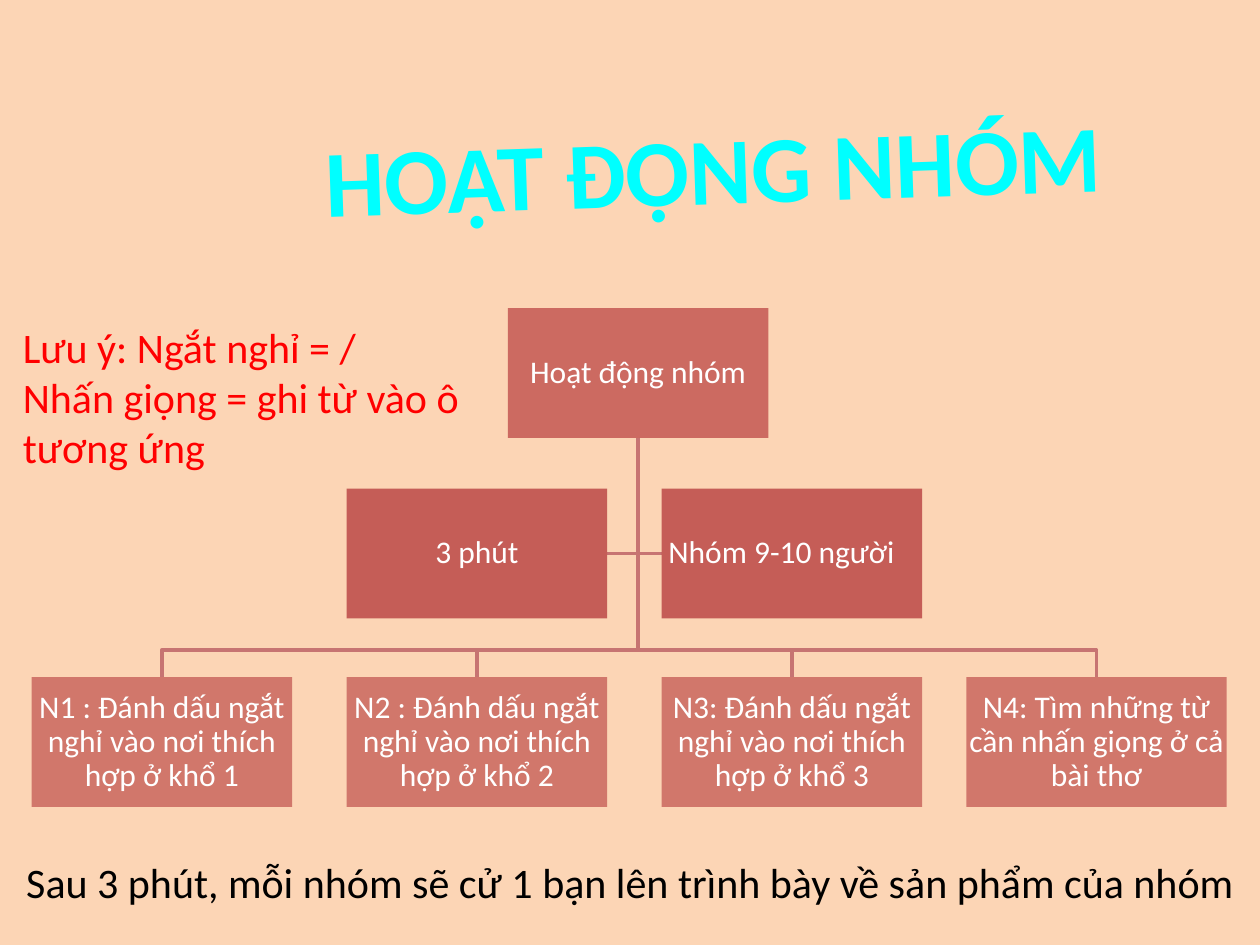
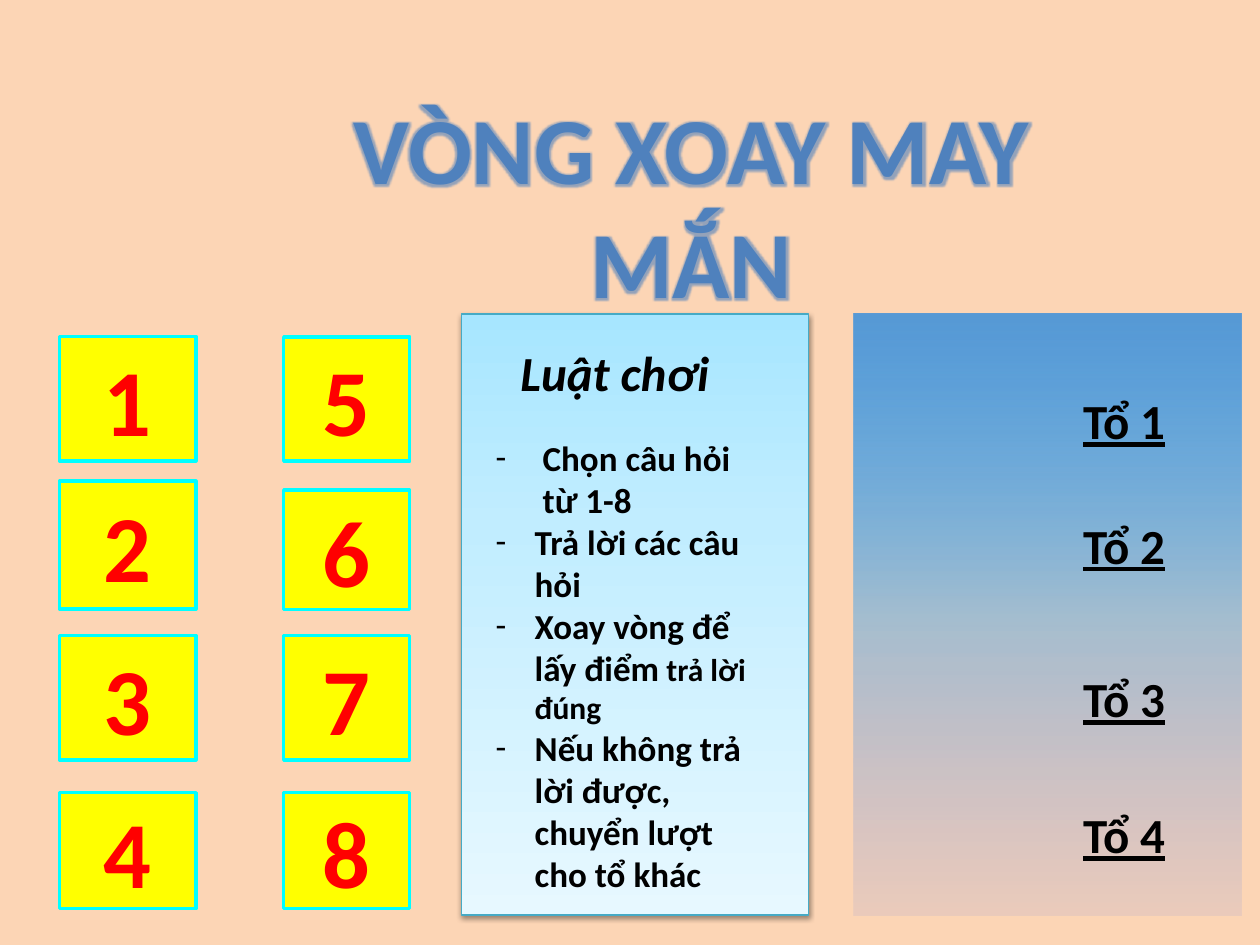
import dataclasses
import pptx
import pptx.util
import pptx.dml.color
import pptx.enum.shapes
import pptx.enum.text
import pptx.oxml
import pptx.oxml.ns
import lxml.etree

Cm = pptx.util.Cm
Pt = pptx.util.Pt
qn = pptx.oxml.ns.qn
add = lxml.etree.SubElement
RGB = pptx.dml.color.RGBColor.from_string
RECT = pptx.enum.shapes.MSO_SHAPE.RECTANGLE
ALIGN = pptx.enum.text.PP_ALIGN
MID = pptx.enum.text.MSO_ANCHOR.MIDDLE
SPACE = 'xmlns:a="http://schemas.openxmlformats.org/drawingml/2006/main"'


@dataclasses.dataclass(frozen=True)
class Theme:
    font: str = "Calibri"
    page: str = "FCD5B5"
    cyan: str = "00FFFF"
    blue: str = "4F81BD"
    red: str = "FF0000"
    gold: str = "FFFF00"
    black: str = "000000"
    white: str = "FFFFFF"
    brick: str = "C0504D"
    link: str = "C77472"
    edge: str = "46AAC5"
    sky: tuple = ((0, "A7E6FF", 100), (35, "C1EDFF", 100), (100, "E7F8FF", 100))
    dusk: tuple = ((0, "5799D5", 100), (50, "0192FF", 35), (100, "3366FF", 8))
    huge: int = 54
    head: int = 28
    note: int = 24
    rule: int = 20
    node: int = 18


theme = Theme()


def write(shape, lines, size, ink, bold=False, align=ALIGN.LEFT, wrap=True):
    frame = shape.text_frame
    frame.word_wrap = wrap
    for i, line in enumerate(lines):
        para = frame.paragraphs[0] if i == 0 else frame.add_paragraph()
        para.text = line
        para.alignment = align
        font = para.font
        font.name, font.size, font.bold = theme.font, Pt(size), bold
        font.color.rgb = RGB(ink)
    return frame


def panel(slide, box, fill, line=None, width=0):
    shape = slide.shapes.add_shape(RECT, *map(Cm, box))
    shape.shadow.inherit = False
    if isinstance(fill, str):
        shape.fill.solid()
        shape.fill.fore_color.rgb = RGB(fill)
    else:
        stops = "".join(
            f'<a:gs pos="{pos * 1000}"><a:srgbClr val="{hue}">'
            f'<a:alpha val="{alpha * 1000}"/></a:srgbClr></a:gs>'
            for pos, hue, alpha in fill)
        grad = pptx.oxml.parse_xml(
            f'<a:gradFill {SPACE} rotWithShape="1"><a:gsLst>{stops}</a:gsLst>'
            '<a:lin ang="5400000" scaled="0"/></a:gradFill>')
        shape._element.spPr.find(qn("a:prstGeom")).addnext(grad)
    if line:
        shape.line.color.rgb = RGB(line)
        shape.line.width = Pt(width)
    else:
        shape.line.fill.background()
    return shape


deck = pptx.Presentation()
deck.slide_width, deck.slide_height = Cm(25.4), Cm(19.05)
slides = []
for text, box, ink, turn in (
        ("HOẠT ĐỘNG NHÓM", (5.65, 2.08, 17.45, 2.57), theme.cyan, -2),
        ("VÒNG XOAY MAY MẮN", (6.76, 1.7, 14.35, 2.57), theme.blue, 0)):
    slide = deck.slides.add_slide(deck.slide_layouts[6])
    slide.background.fill.solid()
    slide.background.fill.fore_color.rgb = RGB(theme.page)
    title = slide.shapes.add_textbox(*map(Cm, box))
    title.rotation = turn
    write(title, [text], theme.huge, ink, True, ALIGN.CENTER)
    slides.append(slide)
group, game = slides

wide, high = 5.25, 2.62
cols = (0.64, 6.99, 13.34, 19.48)
top, mid, low, bus = 6.21, 9.85, 13.65, 13.1
stem, foot, side = 10.24 + wide / 2, top + high, mid + high / 2
links = [[(stem, side), (x, side)] for x in (cols[2], cols[1] + wide)]
for x in reversed(cols):
    axis = x + wide / 2
    links.append([(stem, bus), (axis, bus), (axis, low)])
for turns in links:
    draft = group.shapes.build_freeform(Cm(stem), Cm(foot))
    draft.add_line_segments([(Cm(x), Cm(y)) for x, y in turns], close=False)
    link = draft.convert_to_shape()
    link.shadow.inherit = False
    link.fill.background()
    link.line.color.rgb = RGB(theme.link)
    link.line.width = Pt(2)

for text, x, y, alpha, inset in (
        ("Hoạt động nhóm", 10.24, top, 80, 0.03),
        ("N1 : Đánh dấu ngắt nghỉ vào nơi thích hợp ở khổ 1", cols[0], low, 70, 0.03),
        ("N2 : Đánh dấu ngắt nghỉ vào nơi thích hợp ở khổ 2", cols[1], low, 70, 0.03),
        ("N3: Đánh dấu ngắt nghỉ vào nơi thích hợp ở khổ 3", cols[2], low, 70, 0.03),
        ("N4: Tìm những từ cần nhấn giọng ở cả bài thơ", cols[3], low, 70, 0.03),
        ("3 phút", cols[1], mid, 90, 0.03),
        ("Nhóm 9-10 người", cols[2], mid, 90, 0.45)):
    node = panel(group, (x, y, wide, high), theme.brick)
    hue = node._element.spPr.find(qn("a:solidFill"))[0]
    add(hue, qn("a:alpha"), val=str(alpha * 1000))
    frame = write(node, [text], theme.node, theme.white, align=ALIGN.CENTER)
    frame.paragraphs[0].line_spacing = 0.9
    frame.vertical_anchor = MID
    frame.margin_left = frame.margin_top = frame.margin_bottom = Cm(0.03)
    frame.margin_right = Cm(inset)

for lines, box, ink in (
        (["Lưu ý: Ngắt nghỉ = /", "Nhấn giọng = ghi từ vào ô", "tương ứng"],
         (0.21, 6.35, 9.37, 3.33), theme.red),
        (["Sau 3 phút, mỗi nhóm sẽ cử 1 bạn lên trình bày về sản phẩm của nhóm"],
         (0.28, 17.15, 25.07, 1.27), theme.black)):
    note = group.shapes.add_textbox(*map(Cm, box))
    write(note, lines, theme.note, ink, wrap=False)

glow = pptx.oxml.parse_xml(
    f'<a:effectLst {SPACE}><a:glow rad="45720"><a:srgbClr val="{theme.blue}">'
    '<a:alpha val="60000"/></a:srgbClr></a:glow></a:effectLst>')
run = game.shapes[0].text_frame.paragraphs[0].runs[0]
run.font.color.rgb = RGB(theme.blue)
run._r.rPr.find(qn("a:solidFill")).addnext(glow)

count = 0
for x, size, rows in (
        (1.2, 2.75, ((6.78, 2.51), (9.7, 2.58), (12.81, 2.51), (15.98, 2.34))),
        (5.72, 2.54, ((6.79, 2.51), (9.88, 2.41), (12.81, 2.51), (15.98, 2.34)))):
    for y, tall in rows:
        count += 1
        tile = panel(game, (x, y, size, tall), theme.gold, theme.cyan, 2)
        frame = write(tile, [str(count)], theme.huge, theme.red, True, ALIGN.CENTER)
        frame.vertical_anchor = MID

panel(game, (17.2, 6.33, 7.82, 12.12), theme.dusk)
for i, y in enumerate((7.75, 10.26, 13.35, 16.1), 1):
    team = game.shapes.add_textbox(Cm(21.59), Cm(y), Cm(4.01), Cm(1.45))
    frame = write(team, [f"Tổ {i}"], theme.head, theme.black, True)
    frame.paragraphs[0].font.underline = True

card = panel(game, (9.31, 6.33, 6.99, 12.12), theme.sky, theme.edge, 0.75)
shade = pptx.oxml.parse_xml(
    f'<a:outerShdw {SPACE} blurRad="39370" dist="20320" dir="5400000" rotWithShape="0">'
    f'<a:srgbClr val="{theme.black}"><a:alpha val="38000"/></a:srgbClr></a:outerShdw>')
card._element.spPr.find(qn("a:effectLst")).append(shade)

head = game.shapes.add_textbox(Cm(10.24), Cm(6.78), Cm(5.28), Cm(1.45))
frame = write(head, ["Luật chơi"], theme.head, theme.black, True)
frame.paragraphs[0].font.italic = True

rules = game.shapes.add_textbox(Cm(9.74), Cm(8.67), Cm(5.79), Cm(9.58))
frame = write(rules, [
    "Chọn câu hỏi từ 1-8",
    "Trả lời các câu hỏi",
    "Xoay vòng để lấy điểm",
    "Nếu không trả lời được, chuyển lượt cho tổ khác"],
    theme.rule, theme.black, True)
for para, dent in zip(frame.paragraphs, (0.95, 0.79, 0.79, 0.79)):
    prop = para._p.get_or_add_pPr()
    prop.set("marL", str(Cm(dent)))
    prop.set("indent", str(-Cm(dent)))
    font = pptx.oxml.parse_xml(f'<a:buFont {SPACE} typeface="{theme.font}"/>')
    mark = pptx.oxml.parse_xml(f'<a:buChar {SPACE} char="-"/>')
    prop.find(qn("a:defRPr")).addprevious(font)
    font.addnext(mark)
for text, bold in ((" ", False), ("trả lời đúng", True)):
    run = frame.paragraphs[2].add_run()
    run.text = text
    run.font.size, run.font.bold = Pt(theme.node), bold

deck.save("out.pptx")
